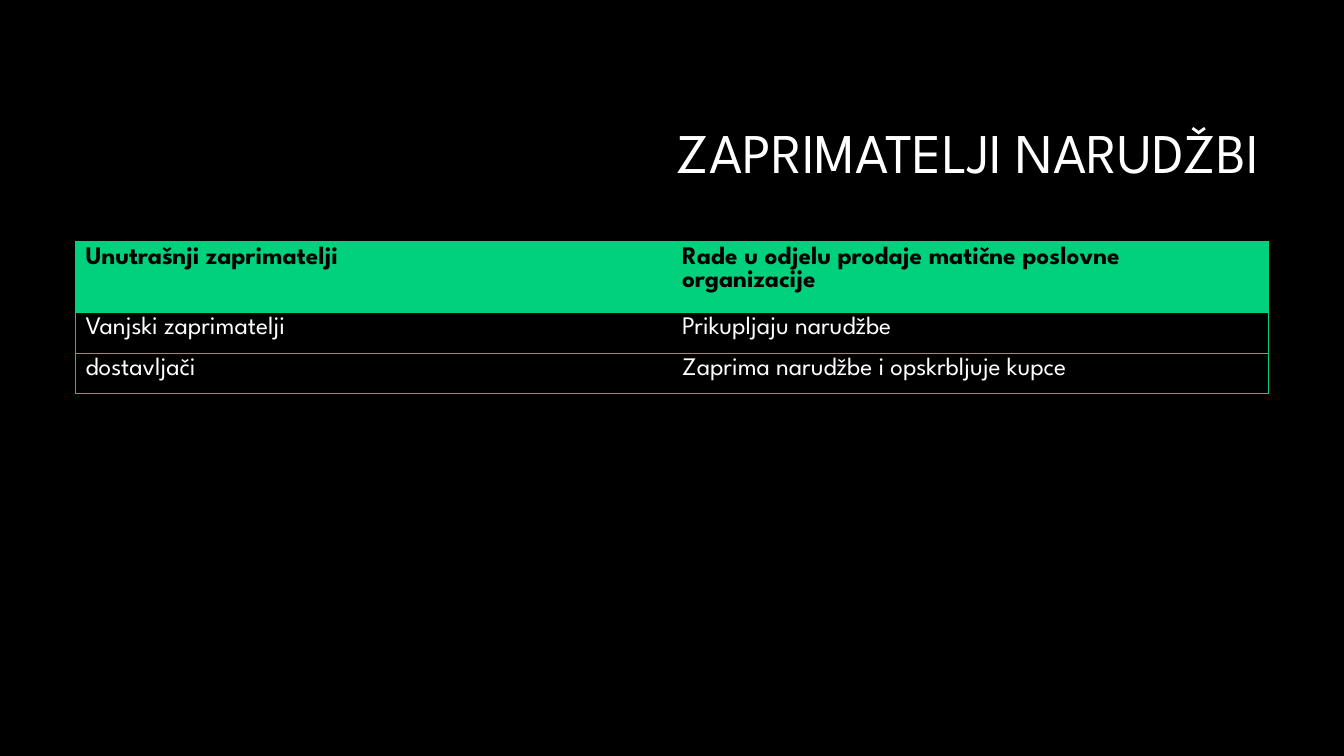
from dataclasses import dataclass

from lxml.etree import SubElement
from pptx import Presentation
from pptx.dml.color import RGBColor
from pptx.enum.text import MSO_ANCHOR, PP_ALIGN
from pptx.oxml.ns import qn
from pptx.slide import Slide
from pptx.table import Table, _Cell
from pptx.util import Pt

BLACK = RGBColor(0x00, 0x00, 0x00)
WHITE = RGBColor(0xFF, 0xFF, 0xFF)
GREEN = RGBColor(0x01, 0xD1, 0x7D)
FONT_NAME = "League Spartan"
BORDER_WIDTH = Pt(0.75)
COLUMN_WIDTH = Pt(426)


@dataclass(frozen=True)
class RecipientRow:
    recipient: str
    duty: str
    height: float = 29.2
    header: bool = False


ROWS = [
    RecipientRow(
        "Unutrašnji zaprimatelji",
        "Rade u odjelu prodaje matične poslovne organizacije",
        height=40.7,
        header=True,
    ),
    RecipientRow("Vanjski zaprimatelji", "Prikupljaju narudžbe"),
    RecipientRow("dostavljači", "Zaprima narudžbe i opskrbljuje kupce"),
]


def add_title(page: Slide, text: str) -> None:
    box = page.shapes.add_textbox(Pt(228.2), Pt(60.5), Pt(678.2), Pt(101.5))
    frame = box.text_frame
    frame.word_wrap = True
    frame.vertical_anchor = MSO_ANCHOR.MIDDLE
    frame.text = text
    para = frame.paragraphs[0]
    para.alignment = PP_ALIGN.RIGHT
    para.line_spacing = 0.9
    span = para.runs[0]
    span.font.name = FONT_NAME
    span.font.size = Pt(40)
    span.font.color.rgb = WHITE


def set_borders(cell: _Cell, visible: dict[str, bool]) -> None:
    properties = cell._tc.get_or_add_tcPr()
    for side, shown in visible.items():
        line = SubElement(properties, qn(f"a:ln{side}"), w=str(BORDER_WIDTH))
        if shown:
            fill = SubElement(line, qn("a:solidFill"))
            SubElement(fill, qn("a:srgbClr"), val=str(GREEN))
        else:
            SubElement(line, qn("a:noFill"))


def fill_cell(cell: _Cell, text: str, header: bool) -> None:
    if header:
        cell.fill.solid()
        cell.fill.fore_color.rgb = GREEN
    else:
        cell.fill.background()
    cell.text_frame.text = text
    span = cell.text_frame.paragraphs[0].runs[0]
    span.font.name = FONT_NAME
    span.font.size = Pt(18)
    span.font.bold = header
    span.font.color.rgb = BLACK if header else WHITE


def fill_table(table: Table, rows: list[RecipientRow]) -> None:
    table.horz_banding = False
    for column in table.columns:
        column.width = COLUMN_WIDTH
    for row_index, row in enumerate(rows):
        table.rows[row_index].height = Pt(row.height)
        for column_index, text in enumerate((row.recipient, row.duty)):
            cell = table.cell(row_index, column_index)
            first = column_index == 0
            set_borders(cell, {"L": first, "R": not first, "T": True, "B": True})
            fill_cell(cell, text, row.header)


def main() -> None:
    deck = Presentation()
    deck.slide_width = Pt(960)
    deck.slide_height = Pt(540)
    page = deck.slides.add_slide(deck.slide_layouts[6])
    page.background.fill.solid()
    page.background.fill.fore_color.rgb = BLACK
    add_title(page, "ZAPRIMATELJI NARUDŽBI")
    total_height = Pt(sum(row.height for row in ROWS))
    frame = page.shapes.add_table(
        len(ROWS), 2, Pt(54), Pt(172.5), 2 * COLUMN_WIDTH, total_height
    )
    fill_table(frame.table, ROWS)
    deck.save("out.pptx")


if __name__ == "__main__":
    main()
